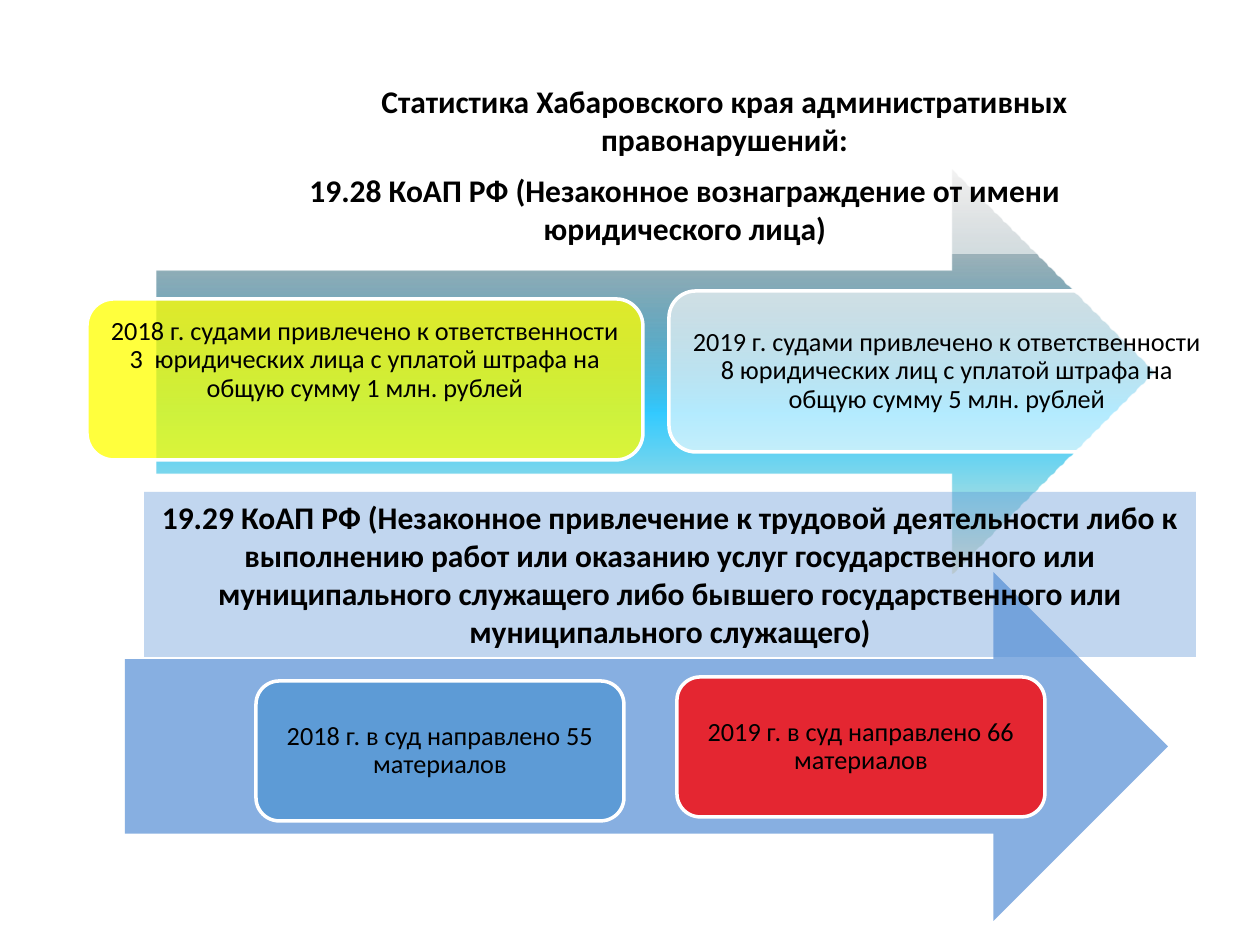
"""Build a slide of regional statistics on two kinds of administrative offence."""
from lxml import etree
from pptx import Presentation
from pptx.dml.color import RGBColor
from pptx.enum.shapes import MSO_SHAPE as Shape
from pptx.enum.text import MSO_ANCHOR as Anchor, PP_ALIGN as Align
from pptx.oxml.ns import qn
from pptx.util import Emu, Pt

BLACK = RGBColor(0x00, 0x00, 0x00)
WHITE = RGBColor(0xFF, 0xFF, 0xFF)
YELLOW = RGBColor(0xFF, 0xFF, 0x00)
RED = RGBColor(0xFF, 0x00, 0x00)
BLUE = RGBColor(0x00, 0x70, 0xC0)
SOFT_BLUE = RGBColor(0x55, 0x8E, 0xD5)
CYAN = RGBColor(0x33, 0xCA, 0xFF)
CREAM = RGBColor(0xF5, 0xEB, 0xCD)

PAGE_SIZE = (1260, 945)
TITLE = ("Статистика Хабаровского края административных правонарушений:", (243, 76, 963, 89))
SKY = [(0, BLACK, 10), (60, CYAN, 100), (100, CREAM, 100)]
ARROWS = [((157, 170, 996, 404), SKY), ((125, 572, 1043, 349), (SOFT_BLUE, 70))]
CARDS = [
    ("2018 г. судами привлечено к ответственности 3  юридических лица с уплатой штрафа "
     "на общую сумму 1 млн. рублей", (87, 299, 556, 161), (YELLOW, 76), 38),
    ("2019 г. судами привлечено к ответственности 8 юридических лиц с уплатой штрафа "
     "на общую сумму 5 млн. рублей", (669, 291, 556, 161), (WHITE, 63), 0),
    ("2018 г. в суд направлено 55 материалов", (256, 681, 368, 140), (BLUE, 31), 0),
    ("2019 г. в суд направлено 66 материалов", (677, 677, 368, 140), (RED, 78), 0),
]
ARTICLES = [
    ("19.28 КоАП РФ (Незаконное вознаграждение от имени юридического лица)",
     (263, 165, 844, 89), (WHITE, 55)),
    ("19.29 КоАП РФ (Незаконное привлечение к трудовой деятельности либо к выполнению "
     "работ или оказанию услуг государственного или муниципального служащего либо "
     "бывшего государственного или муниципального служащего)",
     (144, 492, 1052, 165), (SOFT_BLUE, 36)),
]
HEADING = {"name": "Calibri", "size": Pt(18), "bold": True}
BODY = {"name": "Calibri", "size": Pt(15), "bold": False}
CARD_PAD = 15


def px(length):
    return Emu(round(length * 914400 / 126))


def add_alpha(color_xml, percent):
    etree.SubElement(color_xml, qn("a:alpha"), val=str(percent * 1000))


def add_block(page, kind, place, fill):
    block = page.shapes.add_shape(kind, *map(px, place))
    block.shadow.inherit = False
    block.line.fill.background()
    if isinstance(fill, list):
        block.fill.gradient()
        block.fill.gradient_angle = 270
        stops = block.fill._fill._gradFill.find(qn("a:gsLst"))
        for stop in list(stops):
            stops.remove(stop)
        for position, color, percent in fill:
            stop = etree.SubElement(stops, qn("a:gs"), pos=str(position * 1000))
            add_alpha(etree.SubElement(stop, qn("a:srgbClr"), val=str(color)), percent)
    else:
        color, percent = fill
        block.fill.solid()
        block.fill.fore_color.rgb = color
        add_alpha(next(block._element.spPr.iter(qn("a:srgbClr"))), percent)
    return block


def write(box, text, style, anchor=Anchor.TOP):
    frame = box.text_frame
    frame.word_wrap = True
    frame.vertical_anchor = anchor
    para = frame.paragraphs[0]
    para.alignment = Align.CENTER
    span = para.add_run()
    span.text = text
    span.font.color.rgb = BLACK
    for key, value in style.items():
        setattr(span.font, key, value)
    return frame


def main():
    deck = Presentation()
    deck.slide_width, deck.slide_height = map(px, PAGE_SIZE)
    page = deck.slides.add_slide(deck.slide_layouts[6])

    for place, fill in ARROWS:
        add_block(page, Shape.RIGHT_ARROW, place, fill)
    for text, place, fill, lift in CARDS:
        card = add_block(page, Shape.ROUNDED_RECTANGLE, place, fill)
        card.line.color.rgb = WHITE
        card.line.width = Pt(2)
        frame = write(card, text, BODY, Anchor.MIDDLE)
        frame.paragraphs[0].line_spacing = 0.9
        for side in ("left", "top", "right", "bottom"):
            setattr(frame, f"margin_{side}", px(CARD_PAD + (lift if side == "bottom" else 0)))
    for text, place, fill in ARTICLES:
        write(add_block(page, Shape.RECTANGLE, place, fill), text, HEADING)
    title, place = TITLE
    write(page.shapes.add_textbox(*map(px, place)), title, HEADING)

    deck.save("out.pptx")


if __name__ == "__main__":
    main()
